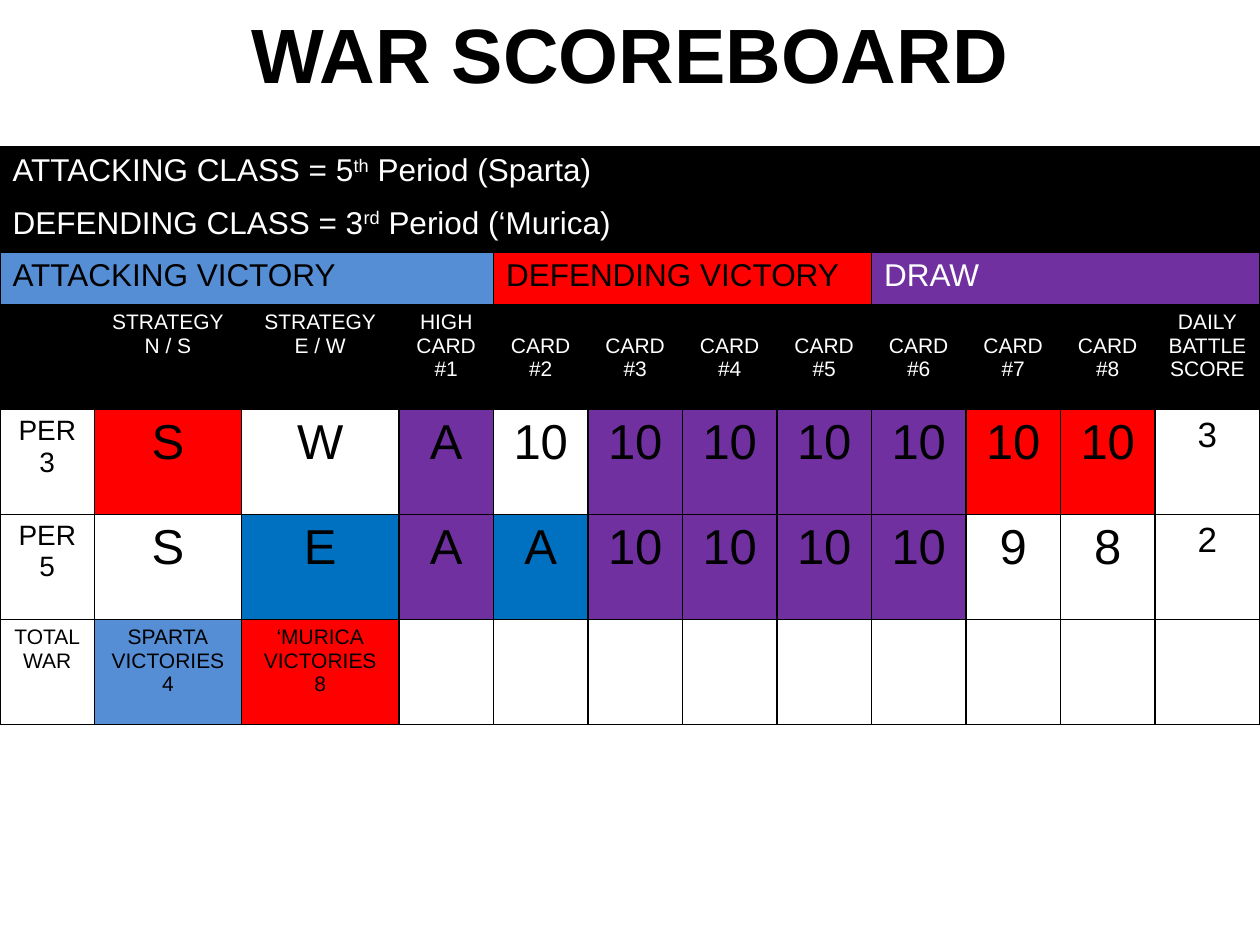
import pptx
import pptx.util
import pptx.dml.color
import pptx.enum.text
import pptx.oxml.ns
import lxml.etree

Pt = pptx.util.Pt
Align = pptx.enum.text.PP_ALIGN
qn = pptx.oxml.ns.qn
BLACK, WHITE, RED, PURPLE = "000000", "FFFFFF", "FF0000", "7030A0"
SKY, BLUE = "558ED5", "0070C0"


def tint(code):
    return pptx.dml.color.RGBColor.from_string(code)


def write(frame, text, size, hue, align, bold=False):
    for i, line in enumerate(text.split("\n")):
        para = frame.paragraphs[0] if i == 0 else frame.add_paragraph()
        para.alignment = align
        for j, part in enumerate(line.split("^")):
            run = para.add_run()
            run.text = part
            run.font.name = "Arial"
            run.font.size = Pt(size)
            run.font.bold = bold
            run.font.color.rgb = tint(hue)
            if j % 2:
                run.font._element.set("baseline", "30000")


deck = pptx.Presentation()
deck.slide_width, deck.slide_height = Pt(720), Pt(540)
slide = deck.slides.add_slide(deck.slide_layouts[6])

title = slide.shapes.add_textbox(0, 0, Pt(720), Pt(60)).text_frame
title.word_wrap = True
title.vertical_anchor = pptx.enum.text.MSO_ANCHOR.MIDDLE
write(title, "WAR SCOREBOARD", 44, BLACK, Align.CENTER, True)

wide = [54, 84, 90] + [54] * 8 + [60]
high = [30] * 3 + [60] * 4
table = slide.shapes.add_table(
    len(high), len(wide), 0, Pt(84), Pt(sum(wide)), Pt(sum(high))
).table
table.first_row = table.horz_banding = False
for col, width in zip(table.columns, wide):
    col.width = Pt(width)
for row, height in zip(table.rows, high):
    row.height = Pt(height)

heads = ["", "STRATEGY\nN / S", "STRATEGY\nE / W", "HIGH\nCARD\n#1"]
heads += [f"CARD\n#{n}" for n in range(2, 9)] + ["DAILY\nBATTLE\nSCORE"]
tens = [("10", 28, PURPLE)] * 4
board = [
    [("ATTACKING CLASS = 5^th^ Period (Sparta)", 18, BLACK)],
    [("DEFENDING CLASS = 3^rd^ Period (‘Murica)", 18, BLACK)],
    [("ATTACKING VICTORY", 18, SKY), ("DEFENDING VICTORY", 18, RED), ("DRAW", 18, PURPLE)],
    [(head, 12, BLACK) for head in heads],
    [("PER\n3", 16, None), ("S", 28, RED), ("W", 28, None), ("A", 28, PURPLE),
     ("10", 28, None), *tens, ("10", 28, RED), ("10", 28, RED), ("3", 20, None)],
    [("PER\n5", 16, None), ("S", 28, None), ("E", 28, BLUE), ("A", 28, PURPLE),
     ("A", 28, BLUE), *tens, ("9", 28, None), ("8", 28, None), ("2", 20, None)],
    [("TOTAL\nWAR", 12, None), ("SPARTA\nVICTORIES\n4", 12, SKY),
     ("‘MURICA\nVICTORIES\n8", 12, RED)] + [("", 12, None)] * 9,
]

for r, items in enumerate(board):
    span = len(wide) // len(items)
    for c in range(len(wide)):
        text, size, fill = items[c // span]
        cell = table.cell(r, c)
        props = cell._tc.get_or_add_tcPr()
        for side in ("a:lnL", "a:lnR", "a:lnT", "a:lnB"):
            line = lxml.etree.SubElement(props, qn(side), w=str(Pt(1)))
            solid = lxml.etree.SubElement(line, qn("a:solidFill"))
            lxml.etree.SubElement(solid, qn("a:srgbClr"), val=BLACK)
        if fill:
            cell.fill.solid()
            cell.fill.fore_color.rgb = tint(fill)
        else:
            cell.fill.background()
        if c % span:
            continue
        if span > 1:
            cell.merge(table.cell(r, c + span - 1))
        if text.startswith("CARD"):
            cell.margin_top = Pt(17)
        if text:
            hue = WHITE if fill == BLACK or text == "DRAW" else BLACK
            write(cell.text_frame, text, size, hue, Align.LEFT if span > 1 else Align.CENTER)

deck.save("out.pptx")
